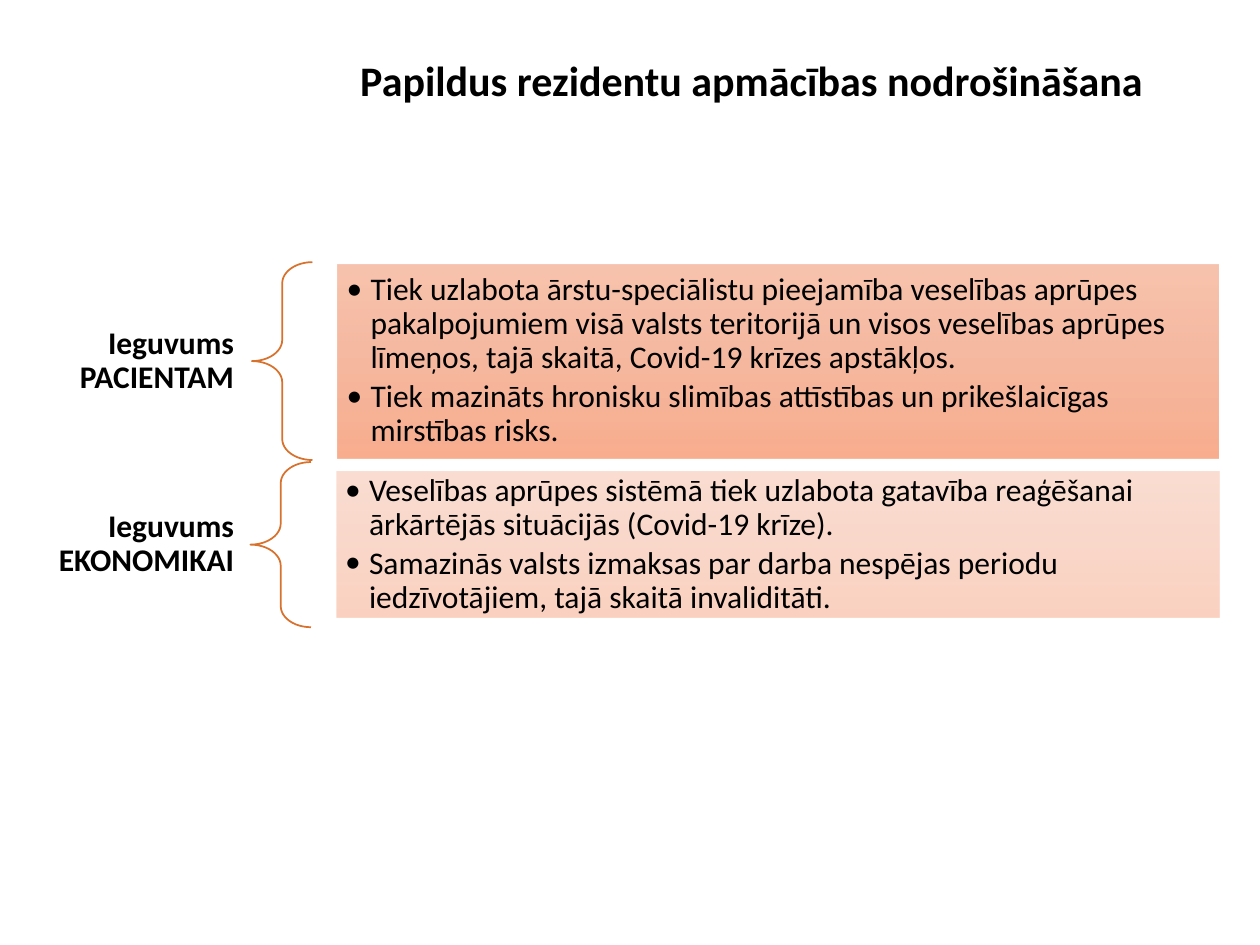
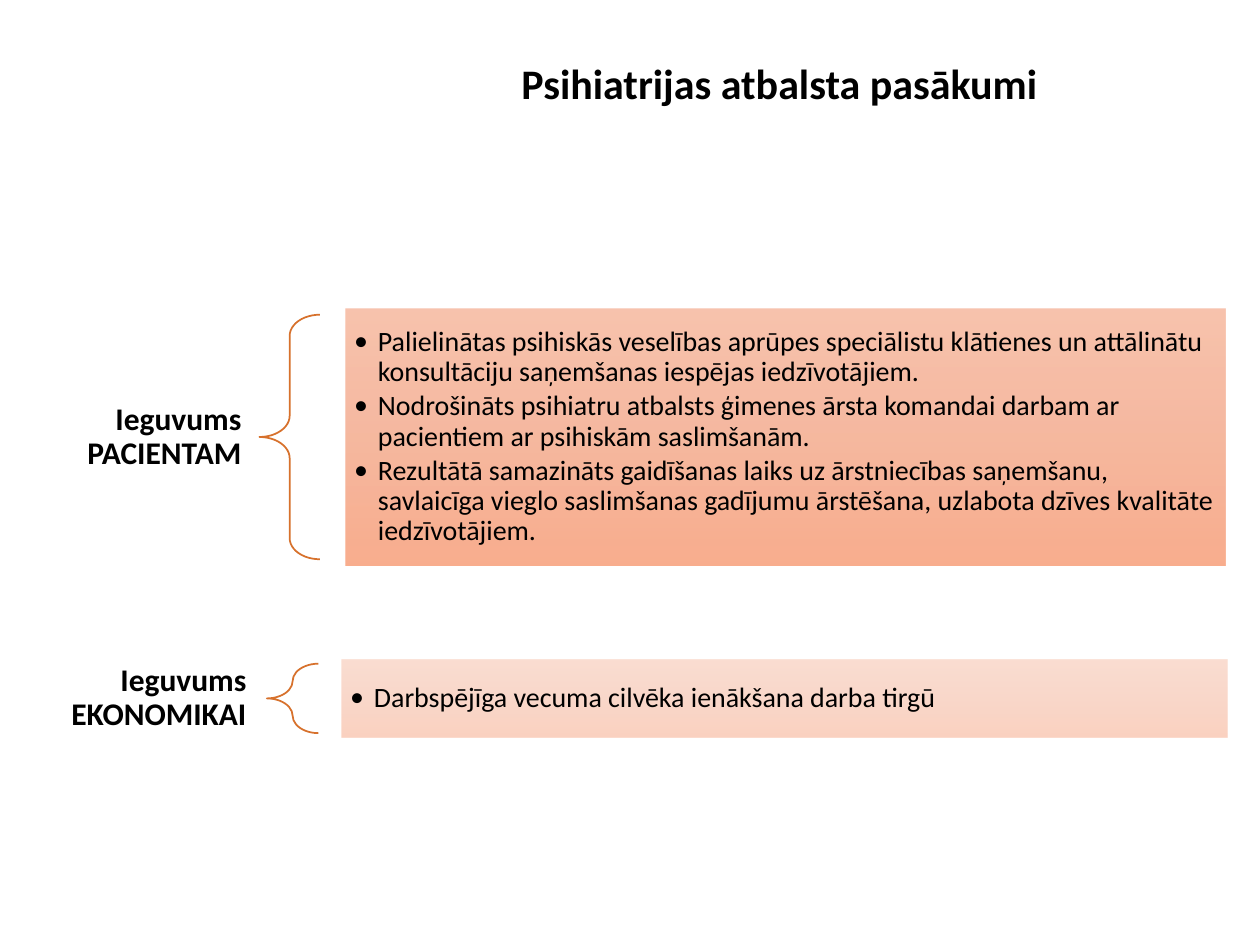
from pptx import Presentation
from pptx.dml.color import RGBColor
from pptx.enum.shapes import MSO_SHAPE as Shape
from pptx.enum.text import MSO_ANCHOR as Anchor, MSO_AUTO_SIZE as AutoSize, PP_ALIGN as Align
from pptx.oxml.ns import qn
from pptx.util import Cm, Pt
from lxml.etree import SubElement

COLORS = {
    "text": "000000",
    "brace": "D7712C",
    "panel_top": "F7BDA5",
    "panel_middle": "F5B196",
    "panel_bottom": "F8A582",
}
FONT = "Calibri"
LABEL_WIDTH, LABEL_HEIGHT = 5.08, 1.9
BULLET_INDENT = Cm(0.48)
PATIENT, ECONOMY = "Ieguvums PACIENTAM", "Ieguvums EKONOMIKAI"


class BenefitDeck:
    """Holds the shared style and the current slide."""

    def __init__(self):
        self.presentation = Presentation()
        self.presentation.slide_width = Cm(25.4)
        self.presentation.slide_height = Cm(19.05)
        self.slide = None

    def format_text(self, paragraph, size, bold=False, align=Align.LEFT):
        paragraph.alignment = align
        paragraph.line_spacing = 0.9
        for run in paragraph.runs:
            run.font.name = FONT
            run.font.size = Pt(size)
            run.font.bold = bold
            run.font.color.rgb = RGBColor.from_string(COLORS["text"])

    def frame(self, shape, side, edge, anchor=Anchor.MIDDLE):
        frame = shape.text_frame
        frame.word_wrap = True
        frame.auto_size = AutoSize.NONE
        frame.vertical_anchor = anchor
        frame.margin_left = frame.margin_right = Cm(side)
        frame.margin_top = frame.margin_bottom = Cm(edge)
        return frame

    def shape(self, kind, left, center, width, height):
        shape = self.slide.shapes.add_shape(
            kind, Cm(left), Cm(center - height / 2), Cm(width), Cm(height))
        shape.shadow.inherit = False
        return shape

    def new_slide(self, heading, left, top, width, height):
        self.slide = self.presentation.slides.add_slide(self.presentation.slide_layouts[5])
        title = self.slide.shapes.title
        title.left, title.top, title.width, title.height = map(Cm, (left, top, width, height))
        frame = self.frame(title, 0.25, 0.13, Anchor.TOP)
        frame.text = heading
        self.format_text(frame.paragraphs[0], 24, True, Align.CENTER)

    def label(self, text, left, center):
        box = self.slide.shapes.add_textbox(
            Cm(left), Cm(center - LABEL_HEIGHT / 2), Cm(LABEL_WIDTH), Cm(LABEL_HEIGHT))
        frame = self.frame(box, 0.36, 0.13)
        frame.text = text
        self.format_text(frame.paragraphs[0], 18, True, Align.RIGHT)

    def brace(self, left, center, width, height):
        brace = self.shape(Shape.LEFT_BRACE, left, center, width, height)
        brace.adjustments[0], brace.adjustments[1] = 0.35, 0.5
        brace.fill.background()
        brace.line.color.rgb = RGBColor.from_string(COLORS["brace"])
        brace.line.width = Pt(1)

    def shade(self, panel, opacity):
        panel.line.fill.background()
        panel.fill.gradient()
        panel.fill.gradient_angle = 270
        stops = panel.element.spPr.find(qn("a:gradFill")).find(qn("a:gsLst"))
        for stop in list(stops):
            stops.remove(stop)
        for position, name in enumerate(("panel_top", "panel_middle", "panel_bottom")):
            stop = SubElement(stops, qn("a:gs"), pos=str(position * 50000))
            color = SubElement(stop, qn("a:srgbClr"), val=COLORS[name])
            SubElement(color, qn("a:alpha"), val=str(opacity * 1000))

    def panel(self, benefits, size, opacity, left, center, width, height):
        panel = self.shape(Shape.RECTANGLE, left, center, width, height)
        self.shade(panel, opacity)
        frame = self.frame(panel, 0.18, 0.18)
        frame.text = "\n".join(benefits)
        for index, paragraph in enumerate(frame.paragraphs):
            properties = paragraph._p.get_or_add_pPr()
            properties.set("marL", str(BULLET_INDENT))
            properties.set("indent", str(-BULLET_INDENT))
            SubElement(properties, qn("a:buFont"), typeface=FONT)
            SubElement(properties, qn("a:buChar"), char="•")
            self.format_text(paragraph, size)
            if index:
                paragraph.space_before = Pt(size * 0.15)

    def benefit_row(self, text, benefits, size, opacity, center, label_left, brace, panel):
        """brace is left, width, height; panel is left, width, height."""
        self.label(text, label_left, center)
        self.brace(brace[0], center, *brace[1:])
        self.panel(benefits, size, opacity, panel[0], center, *panel[1:])


def main():
    deck = BenefitDeck()

    # Resident training
    deck.new_slide("Papildus rezidentu apmācības nodrošināšana", 6.15, 1.09, 18.01, 1.85)
    deck.benefit_row(PATIENT, [
        "Tiek uzlabota ārstu-speciālistu pieejamība veselības aprūpes pakalpojumiem visā "
        "valsts teritorijā un visos veselības aprūpes līmeņos, tajā skaitā, Covid-19 krīzes "
        "apstākļos.",
        "Tiek mazināts hronisku slimības attīstības un prikešlaicīgas mirstības risks.",
    ], 18, 90, 7.28, 0, (5.08, 1.22, 3.99), (6.81, 17.75, 3.91))
    deck.benefit_row(ECONOMY, [
        "Veselības aprūpes sistēmā tiek uzlabota gatavība reaģēšanai ārkārtējās situācijās "
        "(Covid-19 krīze).",
        "Samazinās valsts izmaksas par darba nespējas periodu iedzīvotājiem, tajā skaitā "
        "invaliditāti.",
    ], 18, 50, 10.98, 0, (5.05, 1.22, 3.33), (6.78, 17.81, 2.95))

    # Psychiatric support
    deck.new_slide("Psihiatrijas atbalsta pasākumi", 6.71, 1.14, 18.01, 1.17)
    deck.benefit_row(PATIENT, [
        "Palielinātas psihiskās veselības aprūpes speciālistu klātienes un attālinātu "
        "konsultāciju saņemšanas iespējas iedzīvotājiem.",
        "Nodrošināts psihiatru atbalsts ģimenes ārsta komandai darbam ar pacientiem ar "
        "psihiskām saslimšanām.",
        "Rezultātā samazināts gaidīšanas laiks uz ārstniecības saņemšanu, savlaicīga vieglo "
        "saslimšanas gadījumu ārstēšana, uzlabota dzīves kvalitāte iedzīvotājiem.",
    ], 16, 90, 8.81, 0.15, (5.23, 1.22, 4.93), (6.96, 17.75, 5.16))
    deck.benefit_row(ECONOMY, [
        "Darbspējīga vecuma cilvēka ienākšana darba tirgū",
    ], 16, 50, 14.08, 0.25, (5.38, 1.04, 1.4), (6.88, 17.86, 1.57))

    deck.presentation.save("out.pptx")


if __name__ == "__main__":
    main()
